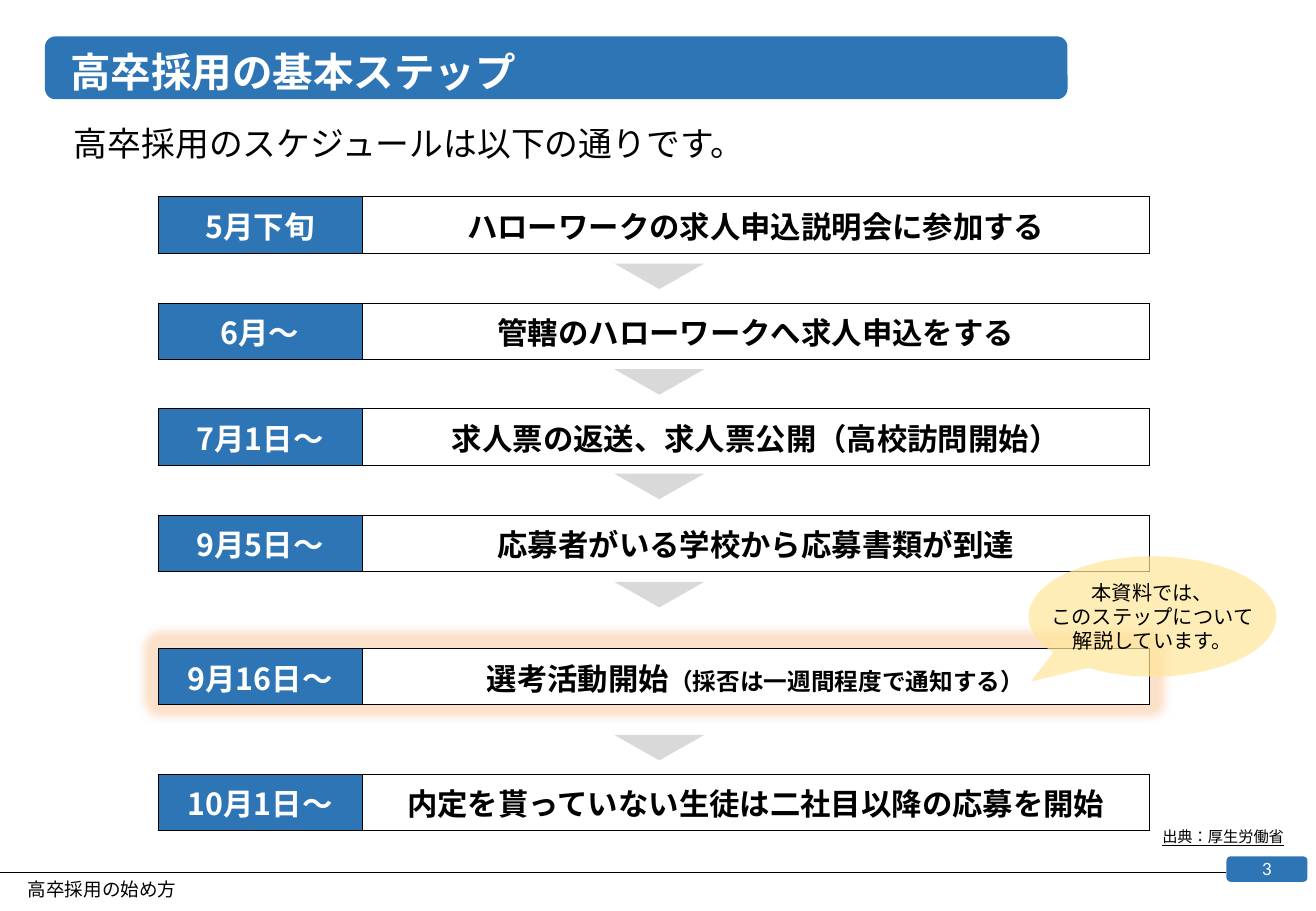
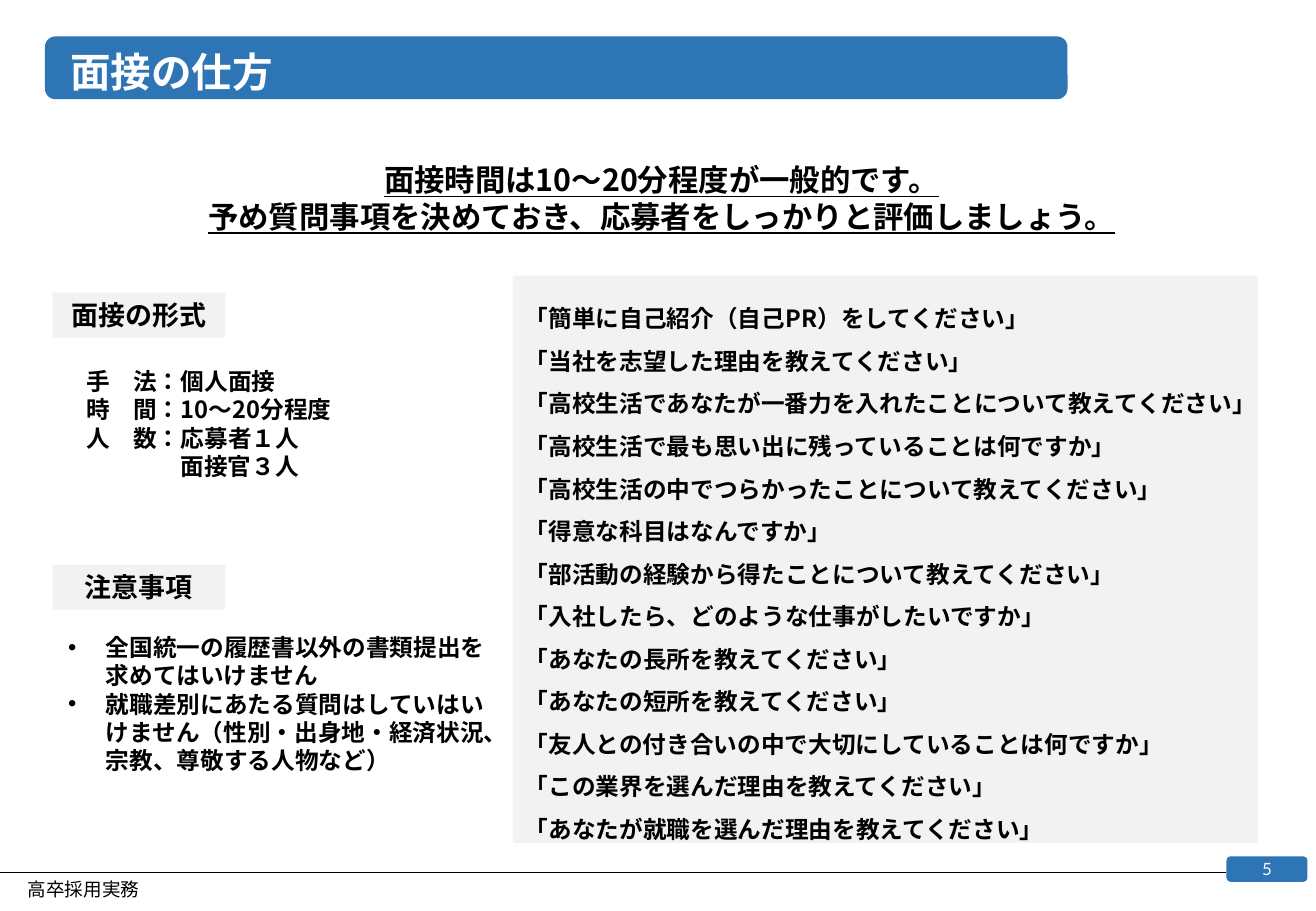
from dataclasses import dataclass

from lxml import etree
from pptx import Presentation
from pptx import util as u
from pptx.dml.color import RGBColor
from pptx.enum import shapes, text
from pptx.oxml.ns import qn

SHAPE = shapes.MSO_SHAPE
ALIGN = text.PP_ALIGN
ANCHOR = text.MSO_ANCHOR


# Theme: colours, fonts, type sizes (points) and line spacing
@dataclass(frozen=True)
class Theme:
    blue: str = "2E75B6"
    black: str = "000000"
    white: str = "FFFFFF"
    panel: str = "F2F2F2"
    arrow: str = "D9D9D9"
    glow: str = "FCE1CA"
    callout: str = "FFE699"
    font: str = "Noto Sans CJK JP"
    number_font: str = "Lato"
    title: int = 24
    lead: int = 20
    head: int = 18
    label: int = 16
    body: int = 14
    callout_size: int = 12
    footer: int = 11
    number: int = 10
    source: int = 9
    single: float = 1.0
    compact: float = 0.9
    loose: float = 1.5


T = Theme()
WIDTH, HEIGHT = u.Inches(10.83), u.Inches(7.5)


# Lengths are percentages of the slide's width and height
def across(share):
    return round(WIDTH * share / 100)


def down(share):
    return round(HEIGHT * share / 100)


def area(x, y, w, h):
    return across(x), down(y), across(w), down(h)


def set_all(obj, values):
    for name, value in values.items():
        setattr(obj, name, value)


# Text
def add_run(p, words, size, color=T.black, font=T.font, **style):
    r = p.add_run()
    r.text = words
    set_all(r.font, {"size": u.Pt(size), "name": font, **style})
    r.font.color.rgb = RGBColor.from_string(color)
    rPr = r.font._element
    rPr.set("lang", "ja-JP")
    etree.SubElement(rPr, qn("a:ea")).set("typeface", font)


def fill_text(tf, lines, size, spacing=T.single, align=ALIGN.LEFT, **style):
    for i, line in enumerate(lines):
        p = tf.paragraphs[0] if i == 0 else tf.add_paragraph()
        set_all(p, {"alignment": align, "line_spacing": spacing})
        add_run(p, line, size, **style)


def add_text(s, box, lines, size, anchor=ANCHOR.TOP, **style):
    tf = s.shapes.add_textbox(*area(*box)).text_frame
    set_all(tf, {"word_wrap": True, "vertical_anchor": anchor})
    fill_text(tf, lines, size, **style)
    return tf


def indent(p, left, first=0):
    pPr = p._p.get_or_add_pPr()
    pPr.set("marL", str(int(left)))
    pPr.set("indent", str(int(first)))
    return pPr


def add_bullet(p):
    pPr = indent(p, u.Inches(0.31), -u.Inches(0.31))
    etree.SubElement(pPr, qn("a:buFont")).set("typeface", "Arial")
    etree.SubElement(pPr, qn("a:buChar")).set("char", "•")


# Shapes
def add_shape(s, kind, box, color):
    sp = s.shapes.add_shape(kind, *area(*box))
    sp.shadow.inherit = False
    sp.fill.solid()
    sp.fill.fore_color.rgb = RGBColor.from_string(color)
    sp.line.fill.background()
    return sp


def add_rule(s, x1, x2, y):
    ends = across(x1), down(y), across(x2), down(y)
    line = s.shapes.add_connector(shapes.MSO_CONNECTOR.STRAIGHT, *ends)
    line.line.color.rgb = RGBColor.from_string(T.black)
    line.line.width = u.Pt(0.25)
    etree.SubElement(line._element.spPr, qn("a:effectLst"))


def add_label(s, y, words):
    sp = add_shape(s, SHAPE.RECTANGLE, (4, y, 13.11, 4.93), T.panel)
    sp.text_frame.vertical_anchor = ANCHOR.TOP
    fill_text(sp.text_frame, [words], T.label, align=ALIGN.CENTER, bold=True)


def add_glow(s, box):
    sp = add_shape(s, SHAPE.ROUNDED_RECTANGLE, box, T.glow)
    effects = sp._element.spPr.find(qn("a:effectLst"))
    etree.SubElement(effects, qn("a:softEdge")).set("rad", str(u.Pt(5)))


def add_callout(s, box, lines):
    sp = add_shape(s, SHAPE.OVAL_CALLOUT, box, T.callout)
    sp.adjustments[0], sp.adjustments[1] = -0.49, 0.54
    color = sp._element.spPr.find(".//" + qn("a:srgbClr"))
    etree.SubElement(color, qn("a:alpha")).set("val", "70000")
    tf = sp.text_frame
    set_all(tf, {"word_wrap": False, "vertical_anchor": ANCHOR.MIDDLE})
    fill_text(tf, lines, T.callout_size, align=ALIGN.CENTER)


# Schedule step: a one-row table of date and action
def format_cell(cell, color):
    tcPr = cell._tc.get_or_add_tcPr()
    for side in ("a:lnL", "a:lnR", "a:lnT", "a:lnB"):
        ln = etree.SubElement(tcPr, qn(side), w=str(u.Pt(0.5)))
        fill = etree.SubElement(ln, qn("a:solidFill"))
        etree.SubElement(fill, qn("a:srgbClr")).set("val", T.black)
    cell.fill.solid()
    cell.fill.fore_color.rgb = RGBColor.from_string(color)
    cell.vertical_anchor = ANCHOR.MIDDLE


def add_step(s, y, date, action, note=None):
    widths = 15.51, 59.83
    table = s.shapes.add_table(1, 2, *area(12, y, sum(widths), 6.17)).table
    set_all(table, {"first_row": False, "horz_banding": False})
    looks = (date, T.blue, T.white), (action, T.white, T.black)
    for i, (words, back, ink) in enumerate(looks):
        table.columns[i].width = across(widths[i])
        cell = table.cell(0, i)
        format_cell(cell, back)
        p = cell.text_frame.paragraphs[0]
        p.alignment = ALIGN.CENTER
        add_run(p, words, T.head, color=ink, bold=True)
    if note:
        add_run(p, note, T.body, bold=True)


# Frame shared by the slides: title band, footer rule, page badge
def new_slide(prs, title, footer, number):
    s = prs.slides.add_slide(prs.slide_layouts[6])
    add_shape(s, SHAPE.ROUNDED_RECTANGLE, (3.42, 4, 77.7, 6.9), T.blue)
    add_text(s, (4.43, 5.33, 73.5, 5.6), [title], T.title, ANCHOR.MIDDLE,
             spacing=T.compact, color=T.white, bold=True)
    add_rule(s, 0, 93.2, 95.73)
    badge = add_shape(s, SHAPE.ROUNDED_RECTANGLE, (93.2, 94, 6.15, 2.8), T.blue)
    tf = badge.text_frame
    set_all(tf, {"margin_top": 0, "margin_bottom": 0,
                 "vertical_anchor": ANCHOR.MIDDLE})
    fill_text(tf, [number], T.number, align=ALIGN.CENTER,
              color=T.white, font=T.number_font)
    add_text(s, (1.2, 96, 33.43, 4), [footer], T.footer, spacing=T.compact)
    return s


STEPS = [
    (21.6, "5月下旬", "ハローワークの求人申込説明会に参加する"),
    (33.33, "6月～", "管轄のハローワークへ求人申込をする"),
    (44.87, "7月1日～", "求人票の返送、求人票公開（高校訪問開始）"),
    (56.6, "9月5日～", "応募者がいる学校から応募書類が到達"),
    (71.2, "9月16日～", "選考活動開始", "（採否は一週間程度で通知する）"),
    (85, "10月1日～", "内定を貰っていない生徒は二社目以降の応募を開始"),
]
ARROW_TOPS = 28.93, 40.53, 52, 63.87, 80.67

QUESTIONS = [
    "「簡単に自己紹介（自己PR）をしてください」",
    "「当社を志望した理由を教えてください」",
    "「高校生活であなたが一番力を入れたことについて教えてください」",
    "「高校生活で最も思い出に残っていることは何ですか」",
    "「高校生活の中でつらかったことについて教えてください」",
    "「得意な科目はなんですか」",
    "「部活動の経験から得たことについて教えてください」",
    "「入社したら、どのような仕事がしたいですか」",
    "「あなたの長所を教えてください」",
    "「あなたの短所を教えてください」",
    "「友人との付き合いの中で大切にしていることは何ですか」",
    "「この業界を選んだ理由を教えてください」",
    "「あなたが就職を選んだ理由を教えてください」",
]


def schedule_slide(prs):
    s = new_slide(prs, "高卒採用の基本ステップ", "高卒採用の始め方", "3")
    add_text(s, (4.71, 13.33, 68.98, 4.93),
             ["高卒採用のスケジュールは以下の通りです。"], T.lead,
             spacing=T.compact)
    add_glow(s, (10.34, 68.4, 78.67, 11.07))
    for step in STEPS:
        add_step(s, *step)
    for y in ARROW_TOPS:
        arrow = add_shape(s, SHAPE.ISOSCELES_TRIANGLE,
                          (46.68, y, 6.83, 2.8), T.arrow)
        arrow.rotation = 180
    add_text(s, (76.67, 90.4, 21.79, 3.07), ["出典：厚生労働省"], T.source,
             spacing=T.compact, align=ALIGN.RIGHT, underline=True)
    add_callout(s, (78.16, 61.07, 18.84, 13.2),
                ["本資料では、", "このステップについて", "解説しています。"])


def interview_slide(prs):
    s = new_slide(prs, "面接の仕方", "高卒採用実務", "5")
    add_text(s, (4.87, 17.07, 90.77, 9.47),
             ["面接時間は10～20分程度が一般的です。",
              "予め質問事項を決めておき、応募者をしっかりと評価しましょう。"],
             T.head, align=ALIGN.CENTER, bold=True, underline=True)

    # Sample questions
    add_shape(s, SHAPE.RECTANGLE, (38.97, 30.27, 56.6, 62.27), T.panel)
    add_text(s, (38.97, 31.2, 59.19, 62.27), QUESTIONS, T.body,
             spacing=T.loose, bold=True)

    # Interview format
    add_label(s, 32.13, "面接の形式")
    tf = add_text(s, (5.63, 39.6, 31.86, 13.87),
                  ["手　法：個人面接", "時　間：10～20分程度",
                   "人　数：応募者１人", "面接官３人"], T.body, bold=True)
    indent(tf.paragraphs[-1], u.Pt(4 * T.body))

    # Points to note
    add_label(s, 62, "注意事項")
    tf = add_text(s, (4.28, 68.8, 34.44, 17.07),
                  ["全国統一の履歴書以外の書類提出を求めてはいけません",
                   "就職差別にあたる質問はしていはいけません"
                   "（性別・出身地・経済状況、宗教、尊敬する人物など）"],
                  T.body, bold=True)
    for p in tf.paragraphs:
        add_bullet(p)


def main():
    prs = Presentation()
    set_all(prs, {"slide_width": WIDTH, "slide_height": HEIGHT})
    schedule_slide(prs)
    interview_slide(prs)
    prs.save("out.pptx")


if __name__ == "__main__":
    main()
